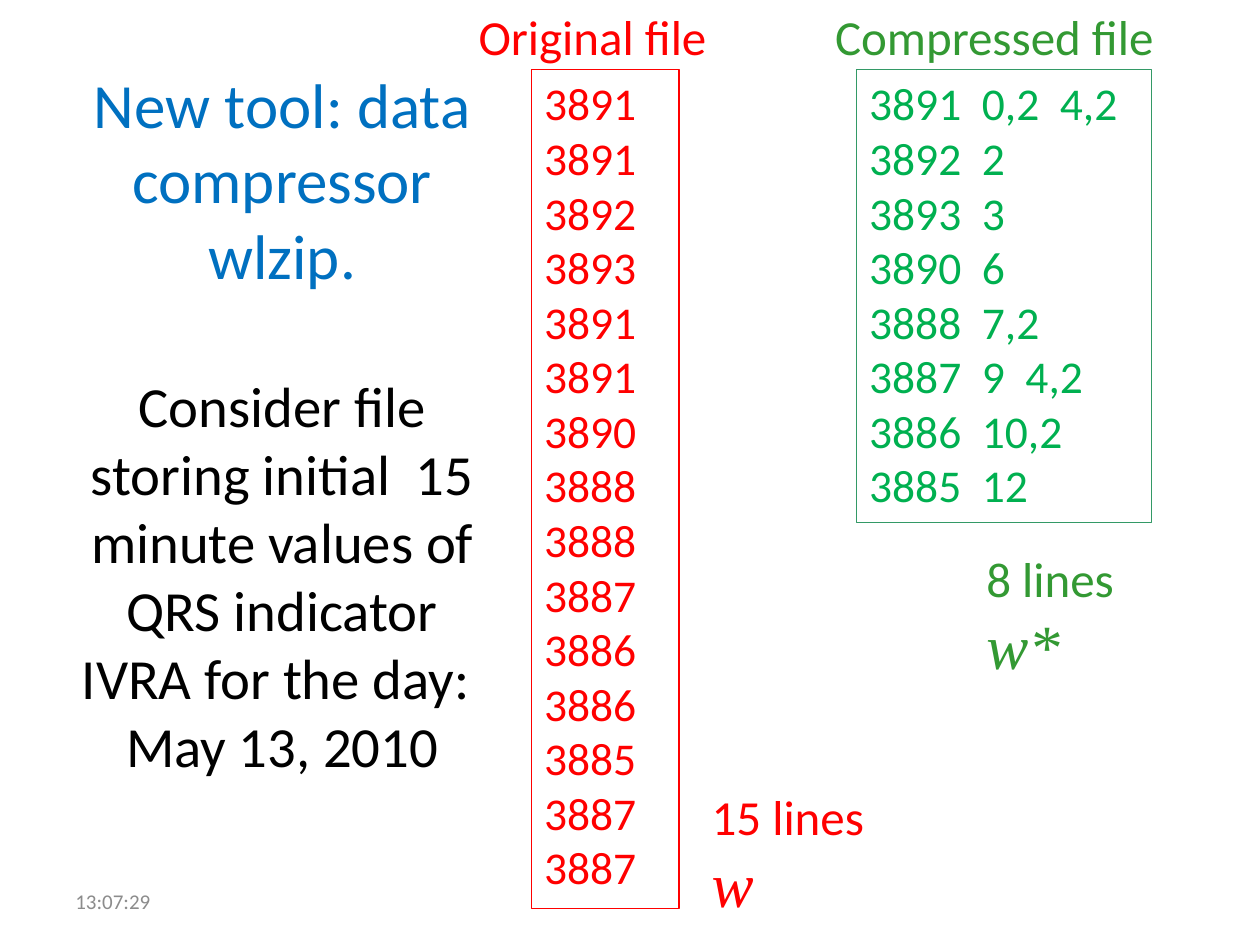
from dataclasses import dataclass

from pptx import Presentation
from pptx.dml.color import RGBColor
from pptx.enum import shapes, text
from pptx.util import Inches, Pt


@dataclass(frozen=True)
class Theme:
    body_font: str = "Calibri"
    symbol_font: str = "Times New Roman"
    blue: str = "0070C0"
    black: str = "000000"
    gray: str = "8C8C8C"
    red: str = "FF0000"
    green: str = "339933"
    data_green: str = "00B050"
    border_green: str = "339966"
    title_size: float = 36
    subtitle_size: float = 32.4
    label_size: float = 28
    data_size: float = 26
    time_size: float = 12


THEME = Theme()

ORIGINAL_LINES = [
    "3891", "3891", "3892", "3893", "3891", "3891", "3890", "3888",
    "3888", "3887", "3886", "3886", "3885", "3887", "3887",
]
COMPRESSED_LINES = [
    "3891  0,2  4,2", "3892  2", "3893  3", "3890  6",
    "3888  7,2", "3887  9  4,2", "3886  10,2", "3885  12",
]


def format_paragraph(paragraph, size, color, font=THEME.body_font, italic=False):
    for run in paragraph.runs:
        run.font.name = font
        run.font.size = Pt(size)
        run.font.italic = italic
        run.font.color.rgb = RGBColor.from_string(color)


def add_title(slide, heading, detail):
    title = slide.shapes.title
    title.left, title.top = Inches(0.5), Inches(0.3)
    title.width, title.height = Inches(3.48), Inches(6.65)
    frame = title.text_frame
    frame.text = heading
    frame.word_wrap = True
    frame.auto_size = text.MSO_AUTO_SIZE.NONE
    frame.vertical_anchor = text.MSO_ANCHOR.MIDDLE
    frame.margin_bottom = Inches(0.6)  # keeps the text above centre
    first = frame.paragraphs[0]
    first.space_after = Pt(45)
    second = frame.add_paragraph()
    second.text = detail
    for paragraph in (first, second):
        paragraph.alignment = text.PP_ALIGN.CENTER
    format_paragraph(first, THEME.title_size, THEME.blue)
    format_paragraph(second, THEME.subtitle_size, THEME.black)


def add_label(slide, left, top, width, height, label, color,
              size=THEME.label_size, symbol=None):
    """Add a one-line label, with an italic symbol below it if given."""
    box = slide.shapes.add_textbox(
        Inches(left), Inches(top), Inches(width), Inches(height))
    frame = box.text_frame
    frame.text = label
    frame.word_wrap = False
    format_paragraph(frame.paragraphs[0], size, color)
    if symbol:
        paragraph = frame.add_paragraph()
        paragraph.text = symbol
        format_paragraph(paragraph, THEME.title_size, color,
                         THEME.symbol_font, italic=True)
    return box


def add_file_box(slide, left, width, height, lines, color, border):
    box = slide.shapes.add_shape(
        shapes.MSO_SHAPE.RECTANGLE,
        Inches(left), Inches(0.55), Inches(width), Inches(height))
    box.shadow.inherit = False
    box.fill.background()
    box.line.color.rgb = RGBColor.from_string(border)
    box.line.width = Pt(0.75)
    frame = box.text_frame
    frame.text = "\n".join(lines)
    frame.word_wrap = True
    frame.auto_size = text.MSO_AUTO_SIZE.SHAPE_TO_FIT_TEXT
    frame.vertical_anchor = text.MSO_ANCHOR.TOP
    for paragraph in frame.paragraphs:
        paragraph.alignment = text.PP_ALIGN.LEFT
        format_paragraph(paragraph, THEME.data_size, color)


def main():
    presentation = Presentation()
    presentation.slide_width = Inches(10)
    presentation.slide_height = Inches(7.5)
    slide = presentation.slides.add_slide(presentation.slide_layouts[5])

    # Title and time
    add_title(
        slide,
        "New tool: data compressor wlzip.",
        "Consider file storing initial  15 minute values of QRS indicator "
        "IVRA for the day: \vMay 13, 2010")
    time = add_label(slide, 0.5, 6.95, 2.33, 0.4, "13:07:29",
                     THEME.gray, THEME.time_size)
    time.text_frame.word_wrap = True
    time.text_frame.vertical_anchor = text.MSO_ANCHOR.MIDDLE

    # File contents
    add_file_box(slide, 4.22, 1.17, 6.66, ORIGINAL_LINES,
                 THEME.red, THEME.red)
    add_file_box(slide, 6.8, 2.34, 3.6, COMPRESSED_LINES,
                 THEME.data_green, THEME.border_green)

    # File names and line counts
    add_label(slide, 3.7, 0, 2.03, 0.57, "Original file", THEME.red)
    add_label(slide, 6.53, 0, 2.76, 0.57, "Compressed file", THEME.green)
    add_label(slide, 7.73, 4.3, 1.23, 1.18, f"{len(COMPRESSED_LINES)} lines",
              THEME.green, symbol="w*")
    add_label(slide, 5.55, 6.19, 1.43, 1.18, f"{len(ORIGINAL_LINES)} lines",
              THEME.red, symbol="w")

    presentation.save("out.pptx")


if __name__ == "__main__":
    main()
